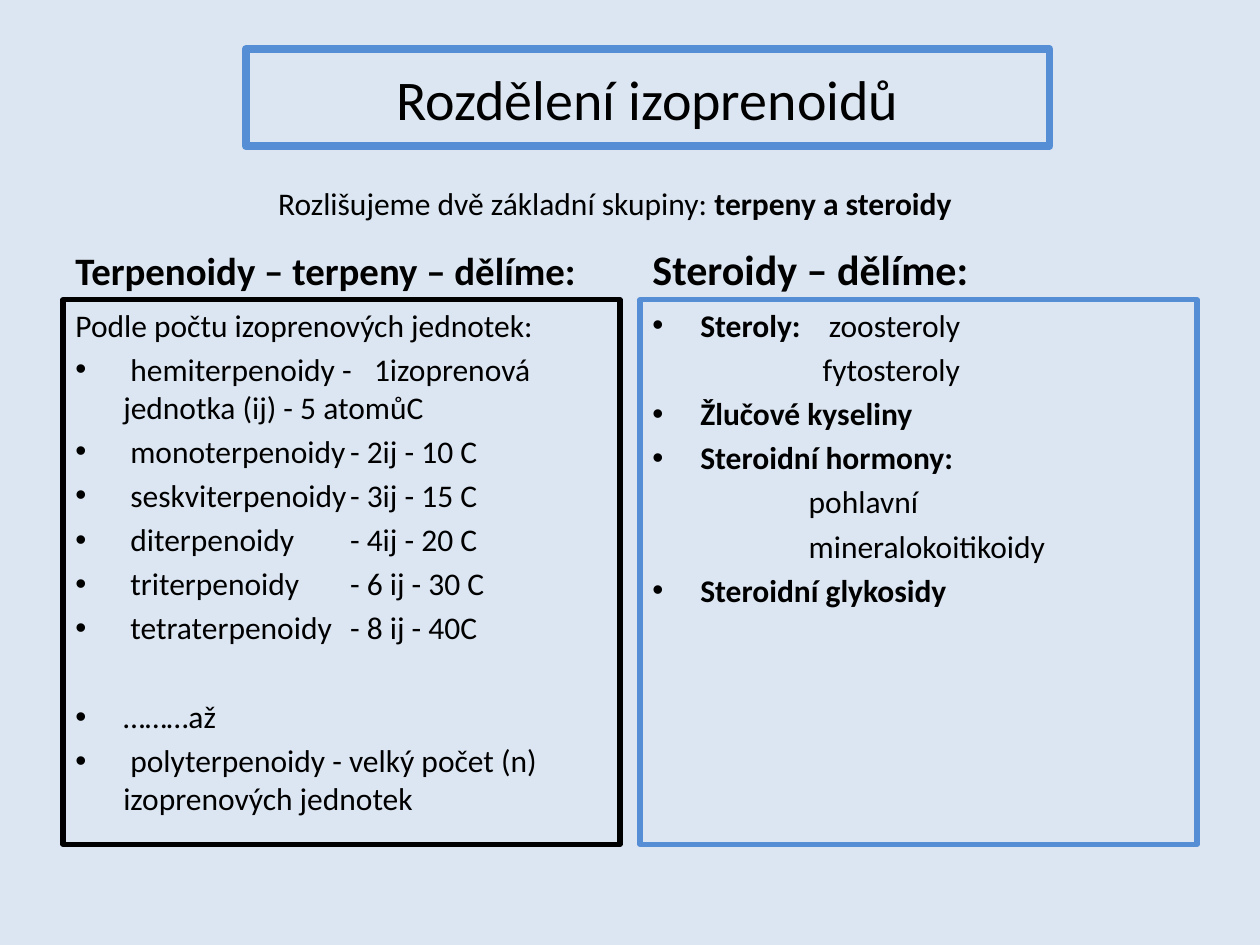
from collections import namedtuple

from lxml import etree
from pptx import Presentation
from pptx.dml.color import RGBColor
from pptx.enum.shapes import MSO_SHAPE
from pptx.enum.text import MSO_ANCHOR, PP_ALIGN
from pptx.oxml.ns import qn
from pptx.util import Inches, Pt

RECT = MSO_SHAPE.RECTANGLE
TOP, MID, LOW = MSO_ANCHOR.TOP, MSO_ANCHOR.MIDDLE, MSO_ANCHOR.BOTTOM
LEFT, CENTER = PP_ALIGN.LEFT, PP_ALIGN.CENTER

WIDE, HIGH = 10, 7.5
FONT = "Calibri"
BODY = 18
HANG = 0.38
HUES = {"back": "DCE6F2", "text": "000000", "blue": "558ED5"}

# Two equal columns inside the side margins
EDGE, GAP = 0.5, 0.16
COL = (WIDE - 2 * EDGE - GAP) / 2
HEAD, LIST = 0.7, 4.32
HEAD_TOP = 1.68

Row = namedtuple("Row", "bold plain dot tab left gap",
                 defaults=("", "", True, None, HANG, 0.2 * BODY))

TERPENES = [
    Row(plain="Podle počtu izoprenových jednotek:", dot=False),
    Row(plain=" hemiterpenoidy -\t1izoprenová jednotka (ij) - 5 atomůC", tab=2.37),
    *(Row(plain=f" {name}\t- {rest}", tab=2.18) for name, rest in (
        ("monoterpenoidy", "2ij - 10 C"),
        ("seskviterpenoidy", "3ij - 15 C"),
        ("diterpenoidy", "4ij - 20 C"),
        ("triterpenoidy", "6 ij - 30 C"),
        ("tetraterpenoidy", "8 ij - 40C"))),
    Row(plain="………až", gap=29.2),
    Row(plain=" polyterpenoidy - velký počet (n) izoprenových jednotek"),
]
STEROIDS = [
    Row("Steroly:", "\tzoosteroly", tab=1.4),
    Row(plain="fytosteroly", dot=False, left=1.35),
    Row("Žlučové kyseliny"),
    Row("Steroidní hormony:"),
    Row(plain="pohlavní", dot=False, left=1.24),
    Row(plain="mineralokoitikoidy", dot=False, left=1.24),
    Row("Steroidní glykosidy"),
]


def color(name):
    return RGBColor.from_string(HUES[name])


def frame(slide, box, anchor=TOP, line=None, width=3):
    """Place an unfilled text area, outlined if a line colour is given."""
    at = [Inches(n) for n in box]
    if line:
        shape = slide.shapes.add_shape(RECT, *at)
        shape.shadow.inherit = False
        shape.fill.background()
        shape.line.color.rgb = color(line)
        shape.line.width = Pt(width)
    else:
        shape = slide.shapes.add_textbox(*at)
    text = shape.text_frame
    text.word_wrap = True
    text.vertical_anchor = anchor
    return text


def write(para, text, size=BODY, bold=False):
    run = para.add_run()
    run.text = text
    run.font.name = FONT
    run.font.size = Pt(size)
    run.font.bold = bold
    run.font.color.rgb = color("text")


def indent(para, row):
    """Set the hanging indent, bullet and tab stop of a list row."""
    para.space_before = Pt(row.gap)
    prop = para._p.get_or_add_pPr()
    hang = HANG if row.left == HANG else 0
    prop.set("marL", str(Inches(row.left)))
    prop.set("indent", str(-Inches(hang)))
    if row.dot:
        etree.SubElement(prop, qn("a:buFont"), typeface="Arial")
        etree.SubElement(prop, qn("a:buChar"), char="•")
    else:
        etree.SubElement(prop, qn("a:buNone"))
    if row.tab:
        stops = etree.SubElement(prop, qn("a:tabLst"))
        etree.SubElement(stops, qn("a:tab"), pos=str(Inches(row.tab)), algn="l")


def title(slide, box, text):
    para = frame(slide, box, MID, "blue", 4.5).paragraphs[0]
    para.alignment = CENTER
    write(para, text, 32)


def intro(slide, box, plain, bold):
    text = frame(slide, box)
    text.word_wrap = False
    write(text.paragraphs[0], plain)
    write(text.paragraphs[0], bold, bold=True)


def column(slide, box, head, size, rows, line):
    """Stack a bold heading on an outlined list."""
    left, top, width, height = box
    label = frame(slide, (left, top, width, HEAD), LOW)
    write(label.paragraphs[0], head, size, True)
    body = frame(slide, (left, top + HEAD, width, height - HEAD), TOP, line)
    for num, row in enumerate(rows):
        para = body.add_paragraph() if num else body.paragraphs[0]
        para.alignment = LEFT
        indent(para, row)
        if row.bold:
            write(para, row.bold, bold=True)
        if row.plain:
            write(para, row.plain)


def main():
    deck = Presentation()
    deck.slide_width, deck.slide_height = Inches(WIDE), Inches(HIGH)
    slide = deck.slides.add_slide(deck.slide_layouts[6])
    slide.background.fill.solid()
    slide.background.fill.fore_color.rgb = color("back")

    title(slide, (1.95, 0.39, 6.38, 0.77), "Rozdělení izoprenoidů")
    parts = (("Terpenoidy – terpeny – dělíme:", 22.2, TERPENES, "text"),
             ("Steroidy – dělíme:", 24, STEROIDS, "blue"))
    for num, part in enumerate(parts):
        left = EDGE + num * (COL + GAP)
        column(slide, (left, HEAD_TOP, COL, HEAD + LIST), *part)
    intro(slide, (2.11, 1.41, 5.56, 0.4),
          "Rozlišujeme dvě základní skupiny: ", "terpeny a steroidy")
    deck.save("out.pptx")


if __name__ == "__main__":
    main()
